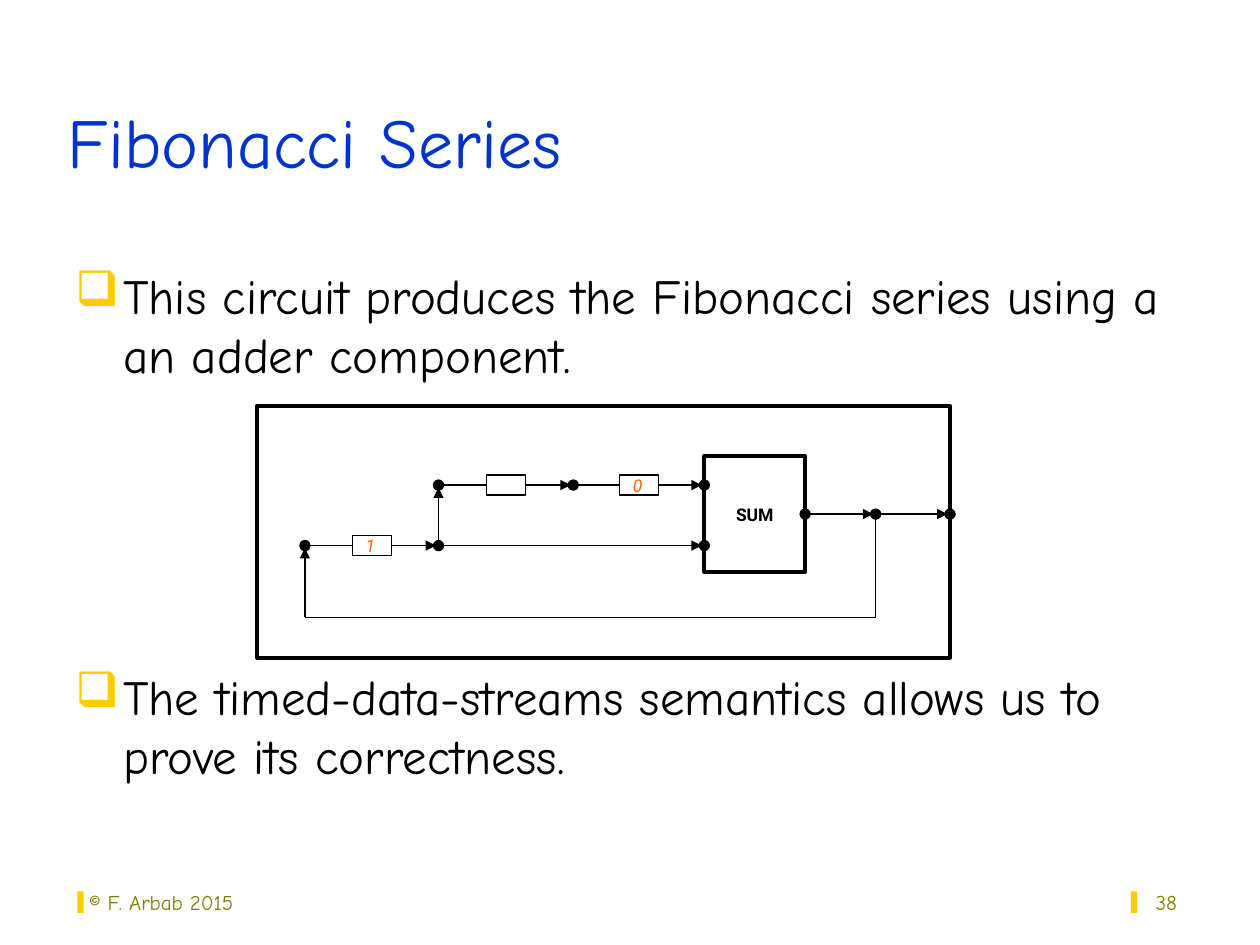
from dataclasses import dataclass

from lxml.etree import SubElement
from pptx import Presentation
from pptx.dml.color import RGBColor
from pptx.enum.shapes import MSO_CONNECTOR, MSO_SHAPE
from pptx.enum.text import MSO_ANCHOR, PP_ALIGN
from pptx.oxml.ns import qn
from pptx.util import Emu, Inches, Pt


@dataclass(frozen=True)
class Theme:
    font: str = "Comic Neue"
    label_font: str = "Roboto"
    title: str = "0033CC"
    ink: str = "000000"
    accent: str = "FFCC00"
    token: str = "FF6600"
    footer: str = "808000"
    title_size: int = 40
    body_size: int = 28
    footer_size: int = 12
    label_size: int = 10
    thin: float = 0.75
    thick: float = 2.25


T = Theme()
WIDTH, HEIGHT = 10, 7.5

# Grid of the circuit: columns and rows of its nodes
SOURCE, FORK, MIDDLE, INPUT, OUTPUT, SPLIT, EXIT = 2.42, 3.48, 4.55, 5.59, 6.39, 6.95, 7.54
UPPER, CENTRE, LOWER, RETURN = 3.85, 4.08, 4.33, 4.9
NODE = 0.08
BUFFER = (0.31, 0.16)
ADDER = (0.8, 0.92)
ARROW_GAP = 0.02


def rgb(value):
    return RGBColor.from_string(value)


def add_bullet(p, char, indent):
    pPr = p._p.get_or_add_pPr()
    pPr.set("marL", str(Inches(indent)))
    pPr.set("indent", str(-Inches(indent)))
    color = SubElement(pPr, qn("a:buClr"))
    SubElement(color, qn("a:srgbClr")).set("val", T.accent)
    SubElement(pPr, qn("a:buChar")).set("char", char)


def add_text(shapes, paragraphs, box, *, size, color, font=T.font, bold=False,
             italic=False, align=PP_ALIGN.LEFT, anchor=MSO_ANCHOR.TOP,
             wrap=True, bullet=None, gap=0):
    """Add a text box; gap is the space in points between paragraphs."""
    tf = shapes.add_textbox(*map(Inches, box)).text_frame
    tf.word_wrap = wrap
    tf.vertical_anchor = anchor
    for i, text in enumerate(paragraphs):
        p = tf.add_paragraph() if i else tf.paragraphs[0]
        p.alignment = align
        if i:
            p.space_before = Pt(gap)
        if bullet:
            add_bullet(p, bullet, 0.38)
        r = p.add_run()
        r.text = text
        r.font.name, r.font.size = font, Pt(size)
        r.font.bold, r.font.italic = bold, italic
        r.font.color.rgb = rgb(color)


def add_block(shapes, kind, centre, size, *, fill=None, line=None, width=T.thin):
    """Add a preset shape around a centre point."""
    (x, y), (w, h) = centre, size
    sp = shapes.add_shape(kind, *map(Inches, (x - w / 2, y - h / 2, w, h)))
    sp.shadow.inherit = False
    if fill:
        sp.fill.solid()
        sp.fill.fore_color.rgb = rgb(fill)
    else:
        sp.fill.background()
    if line:
        sp.line.color.rgb = rgb(line)
        sp.line.width = Pt(width)
    else:
        sp.line.fill.background()


def add_node(shapes, x, y):
    add_block(shapes, MSO_SHAPE.OVAL, (x, y), (NODE, NODE), fill=T.ink, line=T.ink)


def add_wire(shapes, start, end, arrow=False):
    """Add a straight wire; an arrow stops just short of its node."""
    (x1, y1), (x2, y2) = start, end
    if arrow:
        x2 -= ARROW_GAP * ((x2 > x1) - (x2 < x1))
        y2 -= ARROW_GAP * ((y2 > y1) - (y2 < y1))
    cx = shapes.add_connector(MSO_CONNECTOR.STRAIGHT, *map(Inches, (x1, y1, x2, y2)))
    cx.line.color.rgb = rgb(T.ink)
    cx.line.width = Pt(T.thin)
    if arrow:
        SubElement(cx.line._get_or_add_ln(), qn("a:tailEnd")).set("type", "triangle")
    SubElement(cx._element.spPr, qn("a:effectLst"))


def add_label(shapes, text, centre, **style):
    x, y = centre
    w, h = 0.52, 0.27
    add_text(shapes, [text], (x - w / 2, y - h / 2, w, h), size=T.label_size,
             font=T.label_font, align=PP_ALIGN.CENTER, anchor=MSO_ANCHOR.MIDDLE,
             wrap=False, **style)


def add_buffer(shapes, left, right, y, token=None):
    """Add a channel with a one-place buffer between two nodes."""
    x, half = (left + right) / 2, BUFFER[0] / 2
    add_wire(shapes, (left, y), (x - half, y))
    add_block(shapes, MSO_SHAPE.RECTANGLE, (x, y), BUFFER, line=T.ink)
    add_wire(shapes, (x + half, y), (right, y), arrow=True)
    if token:
        add_label(shapes, token, (x - 0.01, y), color=T.token, italic=True)


def add_circuit(s):
    shapes = s.shapes.add_group_shape().shapes
    add_block(shapes, MSO_SHAPE.RECTANGLE, (4.79, 4.22), (5.5, 2),
              line=T.ink, width=T.thick)
    adder = ((INPUT + OUTPUT) / 2, CENTRE)
    add_block(shapes, MSO_SHAPE.RECTANGLE, adder, ADDER, line=T.ink, width=T.thick)
    add_label(shapes, "SUM", adder, color=T.ink, bold=True)

    for left, right, y, token in ((SOURCE, FORK, LOWER, "1"),
                                  (FORK, MIDDLE, UPPER, None),
                                  (MIDDLE, INPUT, UPPER, "0")):
        add_buffer(shapes, left, right, y, token)

    for start, end in (((FORK, LOWER), (FORK, UPPER)),
                       ((FORK, LOWER), (INPUT, LOWER)),
                       ((OUTPUT, CENTRE), (SPLIT, CENTRE)),
                       ((SPLIT, CENTRE), (EXIT, CENTRE)),
                       ((SOURCE, RETURN), (SOURCE, LOWER))):
        add_wire(shapes, start, end, arrow=True)
    add_wire(shapes, (SPLIT, CENTRE), (SPLIT, RETURN))
    add_wire(shapes, (SPLIT, RETURN), (SOURCE, RETURN))

    rows = {UPPER: (FORK, MIDDLE, INPUT), LOWER: (SOURCE, FORK, INPUT),
            CENTRE: (OUTPUT, SPLIT, EXIT)}
    for y, columns in rows.items():
        for x in columns:
            add_node(shapes, x, y)


def add_footer(s, text, left, bar, align):
    add_text(s.shapes, [text], (left, 6.81, 2.08, 0.5), size=T.footer_size,
             color=T.footer, align=align, anchor=MSO_ANCHOR.BOTTOM)
    add_block(s.shapes, MSO_SHAPE.RECTANGLE, (bar, 7.16), (0.05, 0.17), fill=T.accent)


def main():
    prs = Presentation()
    prs.slide_width, prs.slide_height = Inches(WIDTH), Inches(HEIGHT)
    s = prs.slides.add_slide(prs.slide_layouts[6])
    add_text(s.shapes, ["Fibonacci Series"], (0.44, 0.25, 8.5, 1.25),
             size=T.title_size, color=T.title, anchor=MSO_ANCHOR.BOTTOM)
    add_text(s.shapes,
             ["This circuit produces the Fibonacci series using a an adder component.",
              "The timed-data-streams semantics allows us to prove its correctness."],
             (0.5, 2.06, 8.94, 4.56), size=T.body_size, color=T.ink,
             bullet="❑", gap=162)
    add_circuit(s)
    add_footer(s, "© F. Arbab 2015", 0.61, 0.64, PP_ALIGN.LEFT)
    add_footer(s, "38", 7.36, 9, PP_ALIGN.RIGHT)
    prs.save("out.pptx")


if __name__ == "__main__":
    main()
